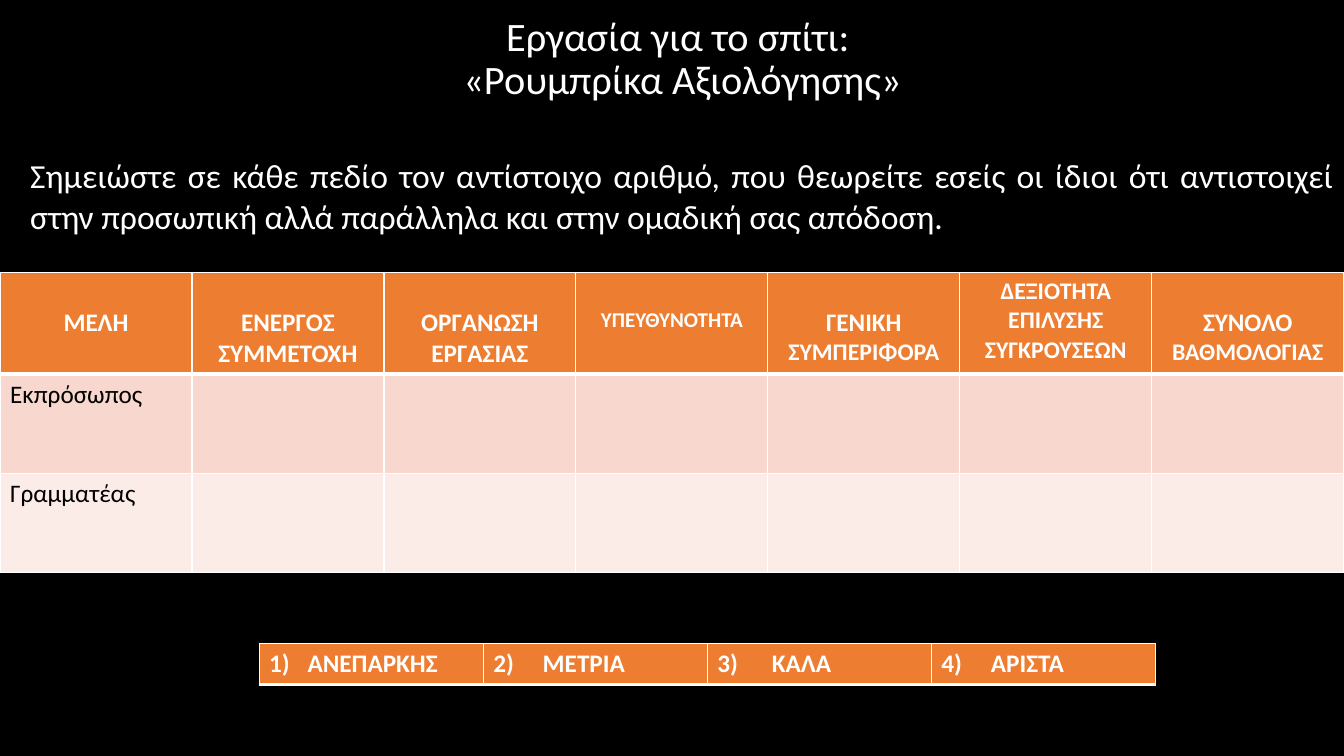
from dataclasses import dataclass
from typing import Any

import lxml.etree
import pptx
import pptx.dml.color
import pptx.enum.text
import pptx.oxml.ns
import pptx.util

Inches = pptx.util.Inches
Pt = pptx.util.Pt
RGBColor = pptx.dml.color.RGBColor
PP_ALIGN = pptx.enum.text.PP_ALIGN
ANCHOR = pptx.enum.text.MSO_ANCHOR
AUTO_SIZE = pptx.enum.text.MSO_AUTO_SIZE
qn = pptx.oxml.ns.qn

BLACK = RGBColor(0x00, 0x00, 0x00)
WHITE = RGBColor(0xFF, 0xFF, 0xFF)
ORANGE = RGBColor(0xED, 0x7D, 0x31)
DARK_BAND = RGBColor(0xF8, 0xD7, 0xCE)
LIGHT_BAND = RGBColor(0xFC, 0xEC, 0xE8)
FONT = "Calibri"
THIN, THICK = 1, 3


@dataclass(frozen=True)
class Phrase:
    """A stretch of text in one size."""
    text: str
    size: float = 18


@dataclass(frozen=True)
class Heading:
    phrases: tuple[Phrase, ...]
    top: float = 0.35


@dataclass(frozen=True)
class Grade:
    label: str
    indent: float


@dataclass(frozen=True)
class Member:
    role: str
    band: RGBColor


HEADINGS = (
    Heading((Phrase("ΜΕΛΗ"),)),
    Heading((Phrase("ΕΝΕΡΓΟΣ ΣΥΜΜΕΤΟΧΗ"),)),
    Heading((Phrase("ΟΡΓΑΝΩΣΗ ΕΡΓΑΣΙΑΣ"),)),
    Heading((Phrase("ΥΠΕΥΘΥΝΟΤΗΤΑ", 15),)),
    Heading((Phrase("ΓΕΝΙΚΗ "), Phrase("ΣΥΜΠΕΡΙΦΟΡΑ", 17))),
    Heading((Phrase("ΔΕΞΙΟΤΗΤΑ ΕΠΙΛΥΣΗΣ ΣΥΓΚΡΟΥΣΕΩΝ", 17),), top=0.05),
    Heading((Phrase("ΣΥΝΟΛΟ "), Phrase("ΒΑΘΜΟΛΟΓΙΑΣ", 17))),
)
MEMBERS = (Member("Εκπρόσωπος", DARK_BAND), Member("Γραμματέας", LIGHT_BAND))
GRADES = (
    Grade("ΑΝΕΠΑΡΚΗΣ", 0.38),
    Grade("ΜΕΤΡΙΑ", 0.49),
    Grade("ΚΑΛΑ", 0.54),
    Grade("ΑΡΙΣΤΑ", 0.49),
)


def apply(target: Any, values: dict[str, Any]) -> None:
    for name, value in values.items():
        setattr(target, name, value)


def write(paragraph: Any, phrases: tuple[Phrase, ...], color: RGBColor,
          bold: bool = False, **layout: Any) -> None:
    apply(paragraph, layout)
    for phrase in phrases:
        run = paragraph.add_run()
        run.text = phrase.text
        apply(run.font, {"name": FONT, "size": Pt(phrase.size), "bold": bold})
        run.font.color.rgb = color


def style_cell(cell: Any, fill: RGBColor, top: float = THIN, bottom: float = THIN) -> None:
    cell.fill.solid()
    cell.fill.fore_color.rgb = fill
    properties = cell._tc.get_or_add_tcPr()
    widths = {"a:lnL": THIN, "a:lnR": THIN, "a:lnT": top, "a:lnB": bottom}
    for position, (tag, width) in enumerate(widths.items()):
        border = lxml.etree.Element(qn(tag), w=str(Pt(width)))
        solid = lxml.etree.SubElement(border, qn("a:solidFill"))
        lxml.etree.SubElement(solid, qn("a:srgbClr"), val=str(WHITE))
        properties.insert(position, border)


def number_paragraph(paragraph: Any, start: int, indent: float) -> None:
    properties = paragraph._p.get_or_add_pPr()
    properties.set("marL", str(Inches(indent)))
    properties.set("indent", str(-Inches(indent)))
    lxml.etree.SubElement(properties, qn("a:buFont"), typeface="+mj-lt")
    lxml.etree.SubElement(properties, qn("a:buAutoNum"), type="arabicParenR", startAt=str(start))


def place(holder: Any, left: float, top: float, width: float, height: float,
          anchor: Any) -> None:
    apply(holder, {"left": Inches(left), "top": Inches(top),
                   "width": Inches(width), "height": Inches(height)})
    apply(holder.text_frame, {"word_wrap": True, "vertical_anchor": anchor,
                              "auto_size": AUTO_SIZE.NONE})


def add_title(slide: Any) -> None:
    title = slide.shapes.title
    place(title, 1.02, 0.18, 11.5, 0.83, ANCHOR.MIDDLE)
    heading = title.text_frame.paragraphs[0]
    apply(heading, {"text": "Εργασία για το σπίτι: \v«Ρουμπρίκα Αξιολόγησης»",
                    "alignment": PP_ALIGN.CENTER, "line_spacing": 0.9})
    for line in heading.runs:
        apply(line.font, {"name": FONT, "size": Pt(28.8)})
        line.font.color.rgb = WHITE


def add_instructions(slide: Any) -> None:
    instructions = slide.placeholders[1]
    place(instructions, 0.2, 1.49, 13.13, 1.21, ANCHOR.TOP)
    sentence = instructions.text_frame.paragraphs[0]
    write(sentence, (Phrase(
        "Σημειώστε σε κάθε πεδίο τον αντίστοιχο αριθμό, που θεωρείτε εσείς οι ίδιοι ότι "
        "αντιστοιχεί στην προσωπική αλλά παράλληλα και στην ομαδική σας απόδοση.", 24),),
        WHITE, alignment=PP_ALIGN.JUSTIFY, space_before=Pt(0))
    properties = sentence._p.get_or_add_pPr()
    properties.set("marL", "0")
    properties.set("indent", "0")
    lxml.etree.SubElement(properties, qn("a:buNone"))


def add_rubric(slide: Any) -> None:
    rubric = slide.shapes.add_table(
        len(MEMBERS) + 1, len(HEADINGS), Inches(0), Inches(2.7), Inches(13.33), Inches(2.95)).table
    for column, heading in enumerate(HEADINGS):
        cell = rubric.cell(0, column)
        style_cell(cell, ORANGE, bottom=THICK)
        cell.margin_top = Inches(heading.top)
        write(cell.text_frame.paragraphs[0], heading.phrases, WHITE, True,
              alignment=PP_ALIGN.CENTER)
    for row, member in enumerate(MEMBERS, start=1):
        for column in range(len(HEADINGS)):
            style_cell(rubric.cell(row, column), member.band, top=THICK if row == 1 else THIN)
        write(rubric.cell(row, 0).text_frame.paragraphs[0], (Phrase(member.role),), BLACK)


def add_scale(slide: Any) -> None:
    scale = slide.shapes.add_table(
        1, len(GRADES), Inches(2.57), Inches(6.38), Inches(8.89), Inches(0.41)).table
    for column, grade in enumerate(GRADES):
        cell = scale.cell(0, column)
        style_cell(cell, ORANGE, bottom=THICK)
        label = cell.text_frame.paragraphs[0]
        write(label, (Phrase(grade.label),), WHITE, True)
        number_paragraph(label, column + 1, grade.indent)


def main() -> None:
    presentation = pptx.Presentation()
    apply(presentation, {"slide_width": Inches(13.33), "slide_height": Inches(7.5)})
    slide = presentation.slides.add_slide(presentation.slide_layouts[1])
    slide.background.fill.solid()
    slide.background.fill.fore_color.rgb = BLACK

    # Heading and instructions
    add_title(slide)
    add_instructions(slide)

    # Assessment grid and grading scale
    add_rubric(slide)
    add_scale(slide)
    presentation.save("out.pptx")


if __name__ == "__main__":
    main()
